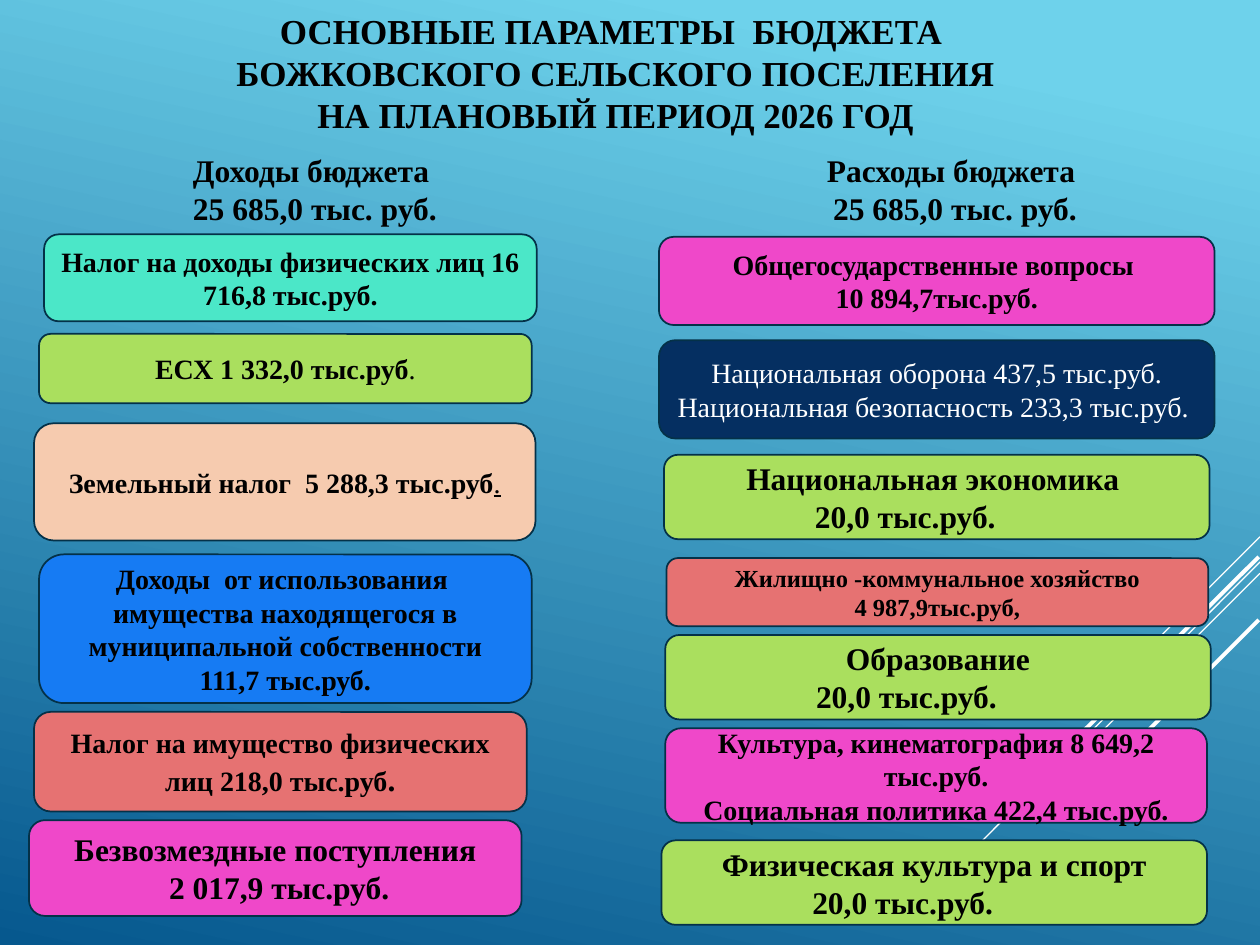
from lxml import etree
from pptx import Presentation
from pptx.dml.color import RGBColor
from pptx.enum.shapes import MSO_CONNECTOR, MSO_SHAPE
from pptx.enum.text import MSO_ANCHOR, PP_ALIGN
from pptx.oxml.ns import qn
from pptx.util import Inches, Pt

STRAIGHT = MSO_CONNECTOR.STRAIGHT
ROUNDED = MSO_SHAPE.ROUNDED_RECTANGLE
MIDDLE, TOP = MSO_ANCHOR.MIDDLE, MSO_ANCHOR.TOP
CENTER = PP_ALIGN.CENTER

BLACK = RGBColor(0x00, 0x00, 0x00)
WHITE = RGBColor(0xFF, 0xFF, 0xFF)
SKY = RGBColor(0x6E, 0xD2, 0xEB)
DEEP = RGBColor(0x06, 0x58, 0x8E)
OUTLINE = RGBColor(0x04, 0x31, 0x48)
TEAL = RGBColor(0x4B, 0xE7, 0xC8)
GREEN = RGBColor(0xAA, 0xDF, 0x5E)
PEACH = RGBColor(0xF6, 0xCB, 0xAF)
BLUE = RGBColor(0x16, 0x7B, 0xF3)
CORAL = RGBColor(0xE6, 0x72, 0x72)
PINK = RGBColor(0xEF, 0x48, 0xC9)
NAVY = RGBColor(0x05, 0x2F, 0x61)

BASE = {"name": "Times New Roman", "bold": True}
SMALL_SUM = "20,0 тыс.руб."

RAYS = [
    (10, 4.26, 9.17, 5.09, 0.75),
    (10, 4.46, 7.3, 7.17, 0.75),
    (10, 4.55, 8.28, 6.27, 0.75),
    (9.99, 4.42, 8.41, 5.99, 2.25),
    (9.99, 4.92, 8.85, 6.06, 2.25),
]

INCOME = [
    ((0.04, 0.71, 3.91, 0.69), TEAL, 16, ["Налог на доходы физических лиц 16 716,8 тыс.руб."], {}),
    ((0, 1.5, 3.91, 0.55), GREEN, 16, ["ЕСХ 1 332,0 тыс.руб"], {"tail": {"bold": False}}),
    ((-0.04, 2.21, 3.98, 0.93), PEACH, 16, ["Земельный налог  5 288,3 тыс.руб"],
     {"tail": {"bold": False, "underline": True}}),
    ((0, 3.25, 3.91, 1.18), BLUE, 16,
     ["Доходы  от использования  имущества находящегося в муниципальной собственности 111,7 тыс.руб."], {}),
    ((-0.04, 4.5, 3.91, 0.79), CORAL, 16, ["Налог на имущество физических лиц 218,0 тыс.руб"],
     {"tail": {"size": Pt(18)}}),
    ((-0.08, 5.36, 3.91, 0.76), PINK, 18, ["Безвозмездные поступления", " 2 017,9 тыс.руб."], {}),
]

EXPENSES = [
    ((-0.32, 0.73, 4.41, 0.7), PINK, 16, ["Общегосударственные вопросы ", "10 894,7тыс.руб."], {}),
    ((-0.32, 1.55, 4.41, 0.78), NAVY, 16,
     ["Национальная оборона 437,5 тыс.руб.", "Национальная безопасность 233,3 тыс.руб. "],
     {"color": WHITE, "bold": False}),
    ((-0.28, 2.46, 4.33, 0.67), GREEN, 18, ["Национальная экономика ", SMALL_SUM], {}),
    ((-0.26, 3.28, 4.3, 0.54), CORAL, 14, ["Жилищно -коммунальное хозяйство", "4 987,9тыс.руб,"], {}),
    ((-0.27, 3.89, 4.33, 0.67), GREEN, 18, ["Образование", SMALL_SUM], {}),
    ((-0.27, 4.63, 4.3, 0.75), PINK, 16,
     ["Культура, кинематография 8 649,2 тыс.руб.", "Социальная политика 422,4 тыс.руб."], {}),
    ((-0.3, 5.52, 4.33, 0.67), GREEN, 18, ["Физическая культура и спорт", SMALL_SUM], {}),
]


def style_run(r, fmt, color):
    for key, value in fmt.items():
        setattr(r.font, key, value)
    r.font.color.rgb = color


def write(sp, lines, size, anchor=MIDDLE, color=BLACK, bold=True, tail=None):
    tf = sp.text_frame
    tf.word_wrap = True
    tf.vertical_anchor = anchor
    fmt = {**BASE, "size": Pt(size), "bold": bold}
    for i, line in enumerate(lines):
        p = tf.add_paragraph() if i else tf.paragraphs[0]
        p.alignment = CENTER
        p.text = line
        for r in p.runs:
            style_run(r, fmt, color)
        if line == SMALL_SUM:
            p._p.get_or_add_pPr().set("marR", str(Inches(0.5)))
    if tail is not None:
        r = p.add_run()
        r.text = "."
        style_run(r, {**fmt, **tail}, color)


def add_text(s, box, lines, size, anchor=TOP):
    sp = s.shapes.add_textbox(*map(Inches, box))
    write(sp, lines, size, anchor)


def add_card(s, box, fill, size, lines, options):
    sp = s.shapes.add_shape(ROUNDED, *map(Inches, box))
    sp.shadow.inherit = False
    sp.fill.solid()
    sp.fill.fore_color.rgb = fill
    sp.line.color.rgb = OUTLINE
    sp.line.width = Pt(1)
    write(sp, lines, size, **options)


def add_column(s, box, heading, cards):
    left, top = box[:2]
    add_text(s, box, heading, 18)
    for (dx, dy, width, height), *card in cards:
        add_card(s, (left + dx, top + dy, width, height), *card)


def add_backdrop(s):
    fill = s.background.fill
    fill.gradient()
    fill.gradient_angle = 258
    for stop, color, position in zip(fill.gradient_stops, (SKY, DEEP), (0.1, 1)):
        stop.color.rgb = color
        stop.position = position
    for *ends, width in RAYS:
        ray = s.shapes.add_connector(STRAIGHT, *map(Inches, ends))
        ray.line.color.rgb = WHITE
        ray.line.width = Pt(width)
        etree.SubElement(ray._element.spPr, qn("a:effectLst"))


def main():
    prs = Presentation()
    prs.slide_width, prs.slide_height = Inches(10), Inches(7.5)
    s = prs.slides.add_slide(prs.slide_layouts[6])
    add_backdrop(s)
    add_text(s, (0.47, 0.13, 8.83, 0.89),
             ["ОСНОВНЫЕ ПАРАМЕТРЫ  БЮДЖЕТА \v БОЖКОВСКОГО СЕЛЬСКОГО ПОСЕЛЕНИЯ \v"
              "НА ПЛАНОВЫЙ ПЕРИОД 2026 ГОД"], 20, MIDDLE)
    add_column(s, (0.31, 1.15, 4.38, 0.71), ["Доходы бюджета ", " 25 685,0 тыс. руб. "], INCOME)
    add_column(s, (5.55, 1.15, 4.06, 0.71), ["Расходы бюджета ", "25 685,0 тыс. руб."], EXPENSES)
    prs.save("out.pptx")


if __name__ == "__main__":
    main()
